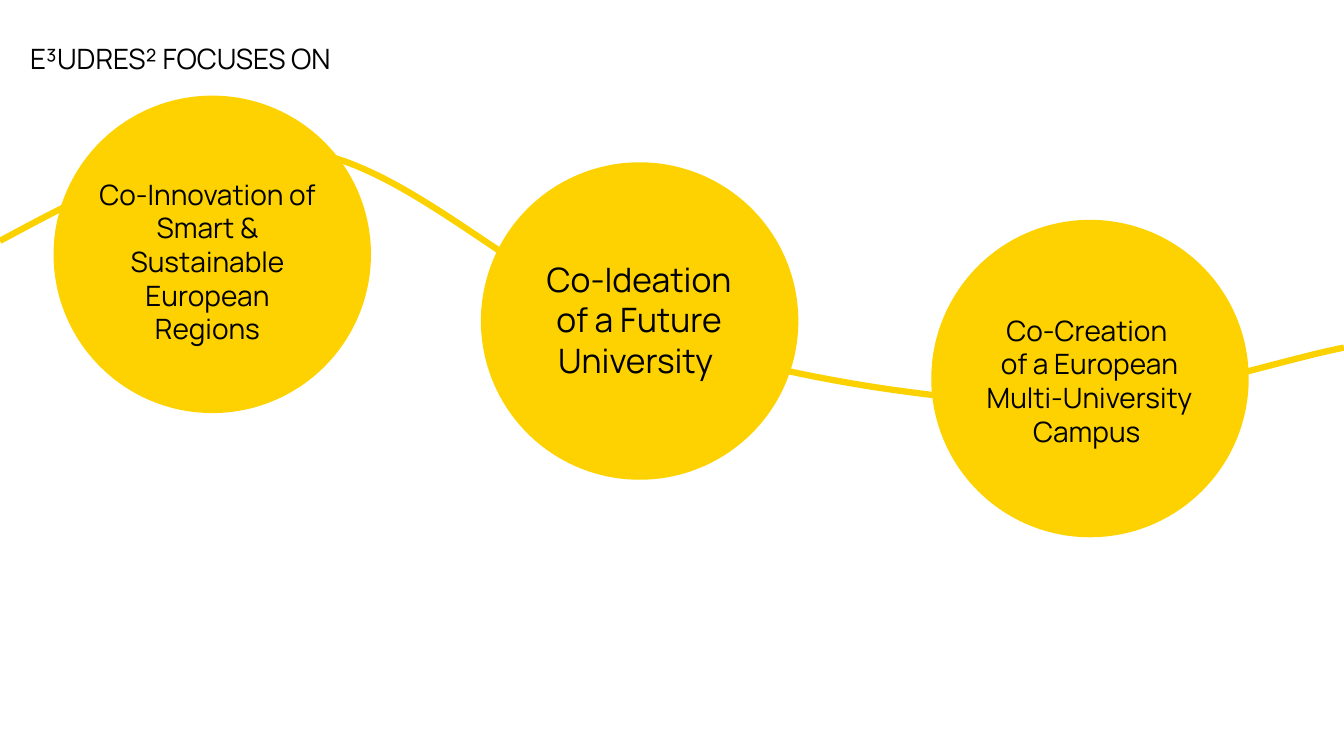
from lxml import etree
from pptx import Presentation
from pptx import util as u
from pptx.dml.color import RGBColor
from pptx.enum import shapes, text
from pptx.oxml.ns import qn

COLORS = {"circle": "FDD200", "wave": "FBD200", "text": "000000"}
FONT = "Manrope"
SLIDE_SIZE = (33.87, 19.05)
DIAMETER = 8

TITLE = "E³UDRES² FOCUSES ON"
TITLE_BOX = (0.76, 1.02, 22.71, 1.02)

# circle corner, label box, font size, paragraphs
FOCUS_AREAS = [
    ((1.35, 2.41), (2.03, 4.34, 6.4, 4.67), 20,
     ["Co-Innovation of Smart & Sustainable European Regions"]),
    ((12.12, 4.09), (13.21, 6.4, 5.79, 3.33), 24,
     ["Co-Ideation of a Future University "]),
    ((23.47, 5.54), (24.26, 7.77, 6.4, 3.68), 20,
     ["Co-Creation ", "of a European Multi-University Campus "]),
]

# start point, then two control points and an end point per curve
WAVE = [
    (0, 6.07),
    (2.46, 4.75), (4.93, 3.4), (7.67, 3.81),
    (10.41, 4.19), (13.26, 7.34), (16.41, 8.41),
    (19.53, 9.47), (23.44, 10.11), (26.52, 10.16),
    (29.01, 10.19), (32.05, 9.12), (33.87, 8.76),
]


def color(name):
    return RGBColor.from_string(COLORS[name])


def cm(values):
    return [u.Cm(value) for value in values]


def add_wave(parent):
    """Draw the control polygon, then turn each three sides into a Bezier curve."""
    start, *rest = cm_points = [cm(point) for point in WAVE]
    builder = parent.build_freeform(*start)
    builder.add_line_segments(rest, close=False)
    wave = builder.convert_to_shape()
    wave.shadow.inherit = False
    wave.fill.background()
    wave.line.color.rgb = color("wave")
    wave.line.width = u.Pt(4.5)

    sides = list(wave._element.iter(qn("a:lnTo")))
    outline = sides[0].getparent()
    for first in range(0, len(sides), 3):
        curve = etree.SubElement(outline, qn("a:cubicBezTo"))
        for side in sides[first:first + 3]:
            curve.append(side[0])
            outline.remove(side)


def add_text(parent, box, paragraphs, size, align):
    frame = parent.add_textbox(*cm(box)).text_frame
    frame.word_wrap = True
    for index, line in enumerate(paragraphs):
        paragraph = frame.add_paragraph() if index else frame.paragraphs[0]
        paragraph.alignment = align
        run = paragraph.add_run()
        run.text = line
        run.font.size = u.Pt(size)
        run.font.name = FONT
        run.font.color.rgb = color("text")
    return frame


def add_focus_area(parent, corner, label_box, size, paragraphs):
    area = parent.add_group_shape().shapes
    circle = area.add_shape(shapes.MSO_SHAPE.OVAL, *cm((*corner, DIAMETER, DIAMETER)))
    circle.shadow.inherit = False
    circle.fill.solid()
    circle.fill.fore_color.rgb = color("circle")
    circle.line.fill.background()
    add_text(area, label_box, paragraphs, size, text.PP_ALIGN.CENTER)


def main():
    deck = Presentation()
    deck.slide_width, deck.slide_height = cm(SLIDE_SIZE)
    canvas = deck.slides.add_slide(deck.slide_layouts[6]).shapes

    add_wave(canvas)
    title = add_text(canvas, TITLE_BOX, [TITLE], 20, text.PP_ALIGN.LEFT)
    title.margin_left = 0
    title.vertical_anchor = text.MSO_ANCHOR.MIDDLE
    title.paragraphs[0].line_spacing = 0.9
    for focus_area in FOCUS_AREAS:
        add_focus_area(canvas, *focus_area)

    deck.save("out.pptx")


if __name__ == "__main__":
    main()
